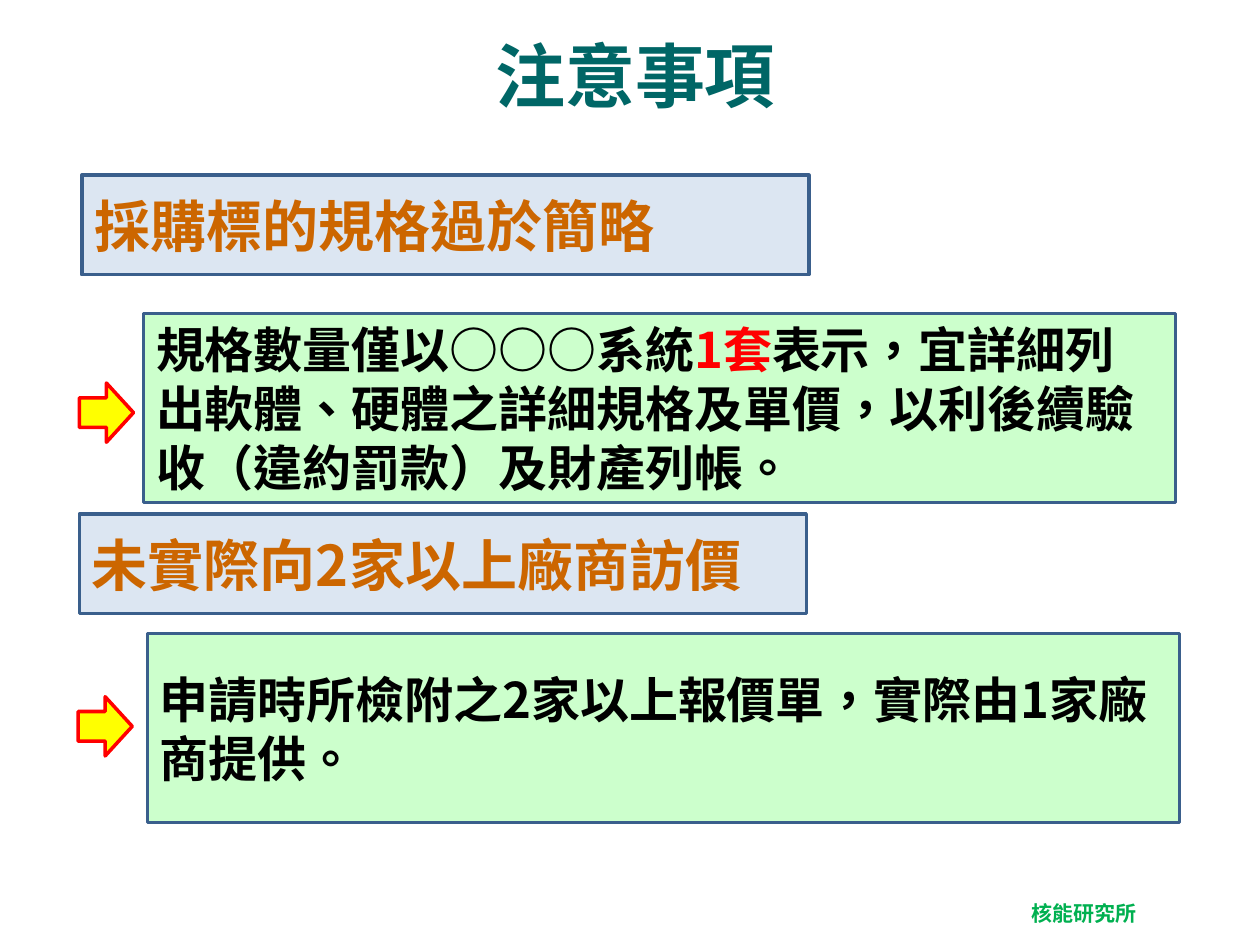
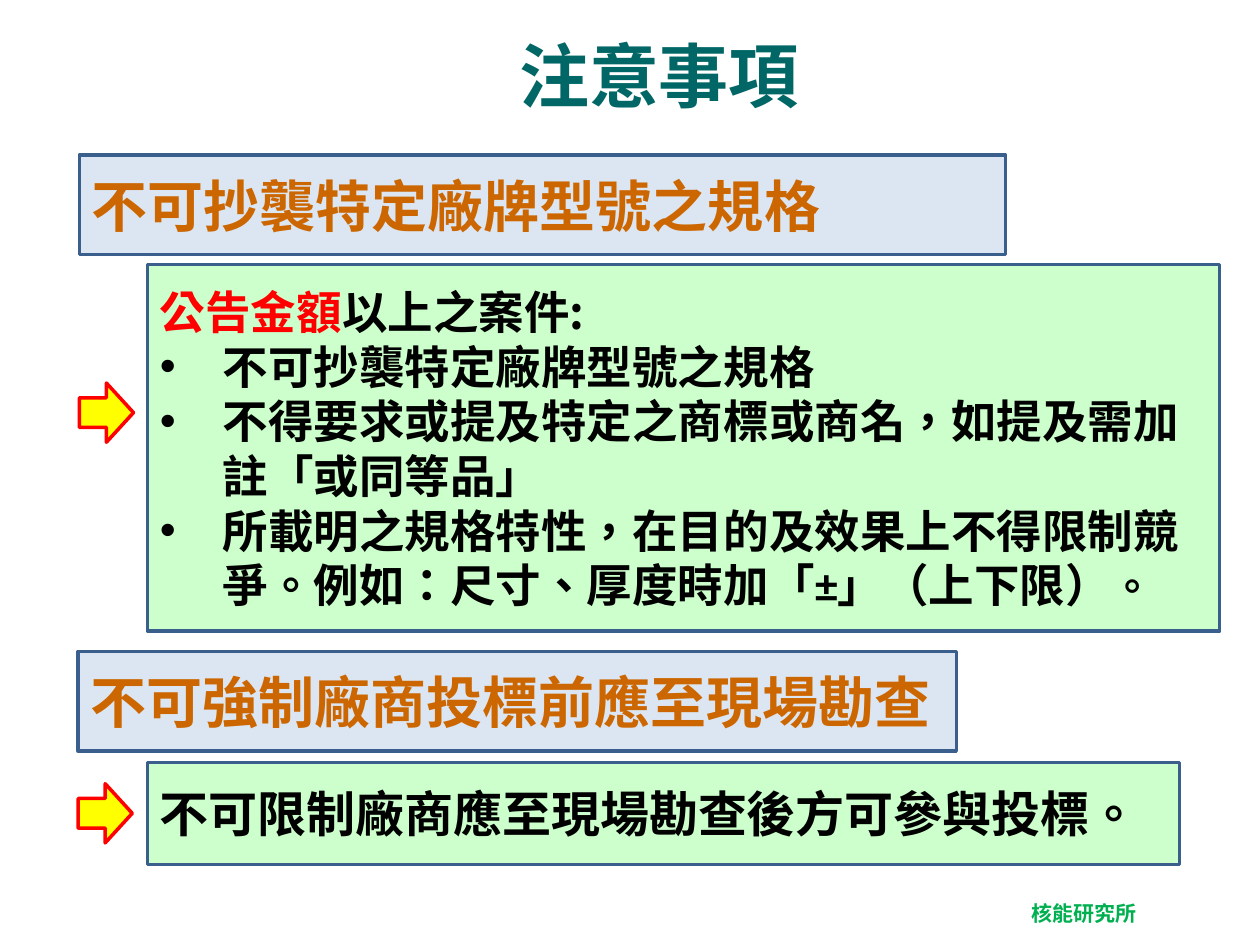
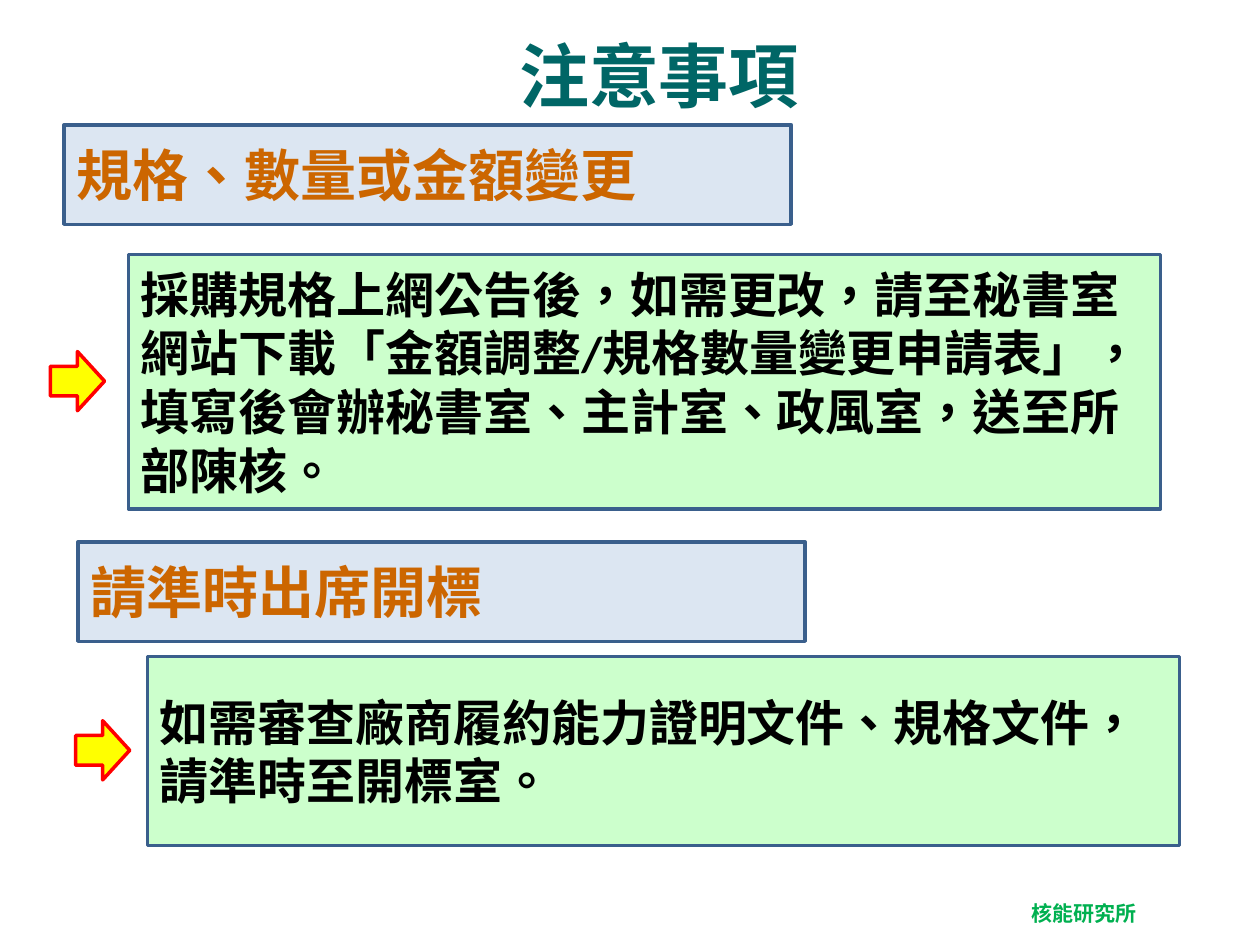
from lxml.etree import SubElement
from pptx import Presentation
from pptx.dml.color import RGBColor
from pptx.enum.shapes import MSO_SHAPE
from pptx.enum.text import MSO_AUTO_SIZE, PP_ALIGN
from pptx.oxml.ns import qn
from pptx.util import Inches, Pt

TEAL = RGBColor(0x00, 0x66, 0x66)
ORANGE = RGBColor(0xCC, 0x66, 0x00)
GREEN = RGBColor(0x00, 0xB0, 0x50)
PALE = RGBColor(0xDC, 0xE6, 0xF2)
MINT = RGBColor(0xCC, 0xFF, 0xCC)
NAVY = RGBColor(0x3A, 0x5F, 0x8C)
YELLOW = RGBColor(0xFF, 0xFF, 0x00)
RED = RGBColor(0xFF, 0x00, 0x00)
BLACK = RGBColor(0x00, 0x00, 0x00)
SANS = "Noto Sans CJK SC"
LATIN = "Calibri"

deck = Presentation()
deck.slide_width = Inches(10)
deck.slide_height = Inches(7.5)
col = deck.slide_width / 100
row = deck.slide_height / 75


def place(x, y, w, h):
    return round(x * col), round(y * row), round(w * col), round(h * row)


def style(para, size, color, face=SANS):
    font = para.font
    font.size = Pt(size)
    font.bold = True
    font.color.rgb = color
    font.name = face
    font._element.set("lang", "zh-TW")
    SubElement(font._element, qn("a:ea")).set("typeface", SANS)


pages = [
    (11.7, [
        ((6.5, 13.9, 57.7), "採購標的規格過於簡略",
         (11.4, 24.9, 81.9, 15), (6.3, 30.4), 28, SANS,
         [[("規格數量僅以○○○系統", {}), ("1套", {"color": RED}),
           ("表示，宜詳細列出軟體、硬體之詳細規格及單價，以利後續驗收（違約罰款）及財產列帳。", {})]]),
        ((6.3, 40.8, 57.7), "未實際向2家以上廠商訪價",
         (11.7, 50.3, 81.9, 15), (6.2, 55.3), 28, SANS,
         [[("申請時所檢附之2家以上報價單，實際由1家廠商提供。", {})]]),
    ]),
    (13.6, [
        ((6.3, 12.3, 73.5), "不可抄襲特定廠牌型號之規格",
         (11.7, 21, 85.1, 29.1), (6.3, 30.4), 26, SANS,
         [[("公告金額", {"color": RED}), ("以上之案件:", {})],
          [("不可抄襲特定廠牌型號之規格", {})],
          [("不得要求或提及特定之商標或商名，如提及需加註「或同等品」", {})],
          [("所載明之規格特性，在目的及效果上不得限制競爭。例如：尺寸、厚度時加「±」（上下限）",
            {"face": LATIN}), ("。", {"face": LATIN, "size": 24})]]),
        ((6.2, 51.7, 69.7), "不可強制廠商投標前應至現場勘查",
         (11.7, 60.5, 81.9, 8.1), (6.2, 62.2), 28, SANS,
         [[("不可限制廠商應至現場勘查後方可參與投標。", {})]]),
    ]),
    (13.6, [
        ((5.1, 9.9, 57.7), "規格、數量或金額變更",
         (10.2, 20.2, 81.9, 20.2), (4, 27.9), 28, SANS,
         [[("採購規格上網公告後，如需更改，請至秘書室網站下載「", {}),
           ("金額調整/規格數量變更申請表", {"face": LATIN}),
           ("」，填寫後會辦秘書室、主計室、政風室，送至所部陳核。", {})]]),
        ((6.2, 43, 57.7), "請準時出席開標",
         (11.7, 52.1, 81.9, 15), (6, 57.2), 28, SANS,
         [[("如需審查廠商履約能力證明文件、規格文件，請準時至開標室。", {})]]),
    ]),
]

for left, topics in pages:
    slide = deck.slides.add_slide(deck.slide_layouts[6])
    shapes = slide.shapes

    foot = shapes.add_textbox(*place(81, 71.1, 10.2, 2.9))
    frame = foot.text_frame
    frame.word_wrap = False
    frame.auto_size = MSO_AUTO_SIZE.SHAPE_TO_FIT_TEXT
    frame.margin_left = frame.margin_right = Inches(0.09)
    frame.margin_top = frame.margin_bottom = Inches(0.04)
    frame.text = "核能研究所"
    style(frame.paragraphs[0], 12, GREEN)

    title = shapes.add_textbox(*place(left, 2.1, 77.4, 10.2))
    title.text_frame.word_wrap = True
    title.text_frame.text = "注意事項"
    head = title.text_frame.paragraphs[0]
    head.alignment = PP_ALIGN.CENTER
    style(head, 40, TEAL)

    for bar, topic, box, tip, size, face, lines in topics:
        label, note, arrow = [
            shapes.add_shape(kind, *place(*spot)) for kind, spot in (
                (MSO_SHAPE.RECTANGLE, (*bar, 7.9)),
                (MSO_SHAPE.RECTANGLE, box),
                (MSO_SHAPE.RIGHT_ARROW, (*tip, 4.3, 4.7)))]
        for shape, fill, edge in ((label, PALE, NAVY), (note, MINT, NAVY),
                                  (arrow, YELLOW, RED)):
            shape.shadow.inherit = False
            shape.fill.solid()
            shape.fill.fore_color.rgb = fill
            shape.line.color.rgb = edge
            shape.line.width = Pt(2)

        label.text_frame.text = topic
        para = label.text_frame.paragraphs[0]
        para.alignment = PP_ALIGN.LEFT
        style(para, 32, ORANGE)

        frame = note.text_frame
        for i, runs in enumerate(lines):
            para = frame.add_paragraph() if i else frame.paragraphs[0]
            para.alignment = PP_ALIGN.LEFT
            if i:
                props = para._p.get_or_add_pPr()
                props.set("marL", str(Inches(0.5)))
                props.set("indent", str(-Inches(0.5)))
                SubElement(props, qn("a:buFont")).set("typeface", "Arial")
                SubElement(props, qn("a:buChar")).set("char", "•")
            style(para, size, BLACK, face)
            for text, look in runs:
                run = para.add_run()
                run.text = text
                if look:
                    style(run, look.get("size", size), look.get("color", BLACK),
                          look.get("face", face))

deck.save("out.pptx")
